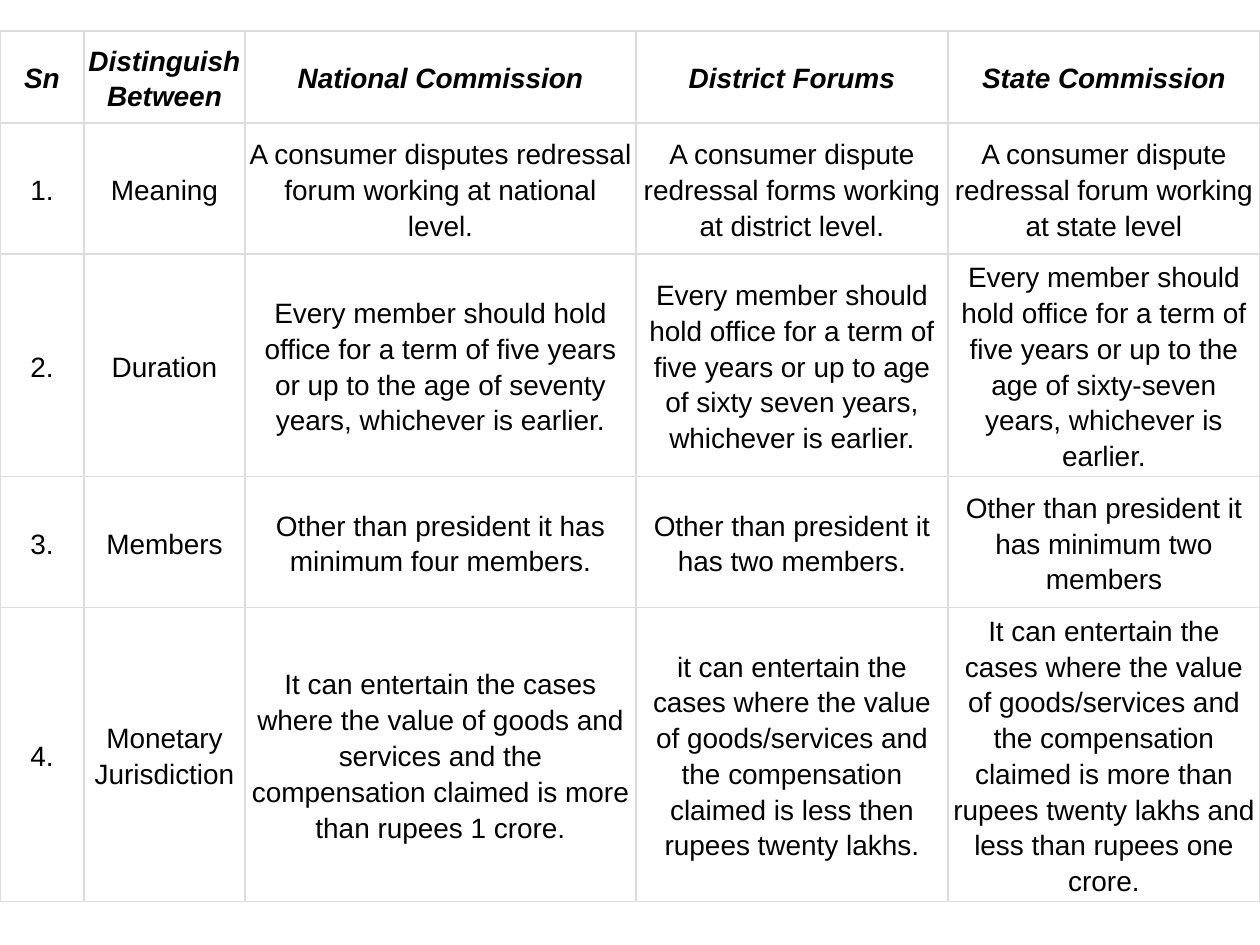
"""Build a slide with a table that compares three consumer forums."""
from lxml import etree
from pptx import Presentation
from pptx import util as u
from pptx.dml.color import RGBColor
from pptx.enum import text
from pptx.oxml.ns import qn

ROWS = [
    ("Sn", "Distinguish Between", "National Commission", "District Forums",
     "State Commission"),
    ("1.", "Meaning",
     "A consumer disputes redressal forum working at national level.",
     "A consumer dispute redressal forms working at district level.",
     "A consumer dispute redressal forum working at state level"),
    ("2.", "Duration",
     "Every member should hold office for a term of five years or up to "
     "the age of seventy years, whichever is earlier.",
     "Every member should hold office for a term of five years or up to "
     "age of sixty seven years, whichever is earlier.",
     "Every member should hold office for a term of five years or up to "
     "the age of sixty-seven years, whichever is earlier."),
    ("3.", "Members",
     "Other than president it has minimum four members.",
     "Other than president it has two members.",
     "Other than president it has minimum two members"),
    ("4.", "Monetary Jurisdiction",
     "It can entertain the cases where the value of goods and services and "
     "the compensation claimed is more than rupees 1 crore.",
     "it can entertain the cases where the value of goods/services and "
     "the compensation claimed is less then rupees twenty lakhs.",
     "It can entertain the cases where the value of goods/services and "
     "the compensation claimed is more than rupees twenty lakhs and "
     "less than rupees one crore."),
]
WIDTHS = [84, 161, 391, 312, 312]
HEIGHTS = [92, 131, 219, 131, 277]
TOP, TALL = 31, 903
PAGE = (1260, 945)
COLORS = {"ink": "000000", "paper": "FFFFFF", "rule": "DDDDDD"}
INSET = 4
CELL = {"vertical_anchor": text.MSO_ANCHOR.MIDDLE}
PARA = {"alignment": text.PP_ALIGN.CENTER, "line_spacing": 1.15}
FONT = {"name": "Arial", "size": u.Pt(16)}


def px(n):
    return u.Emu(n * 914400 // 126)


def apply(item, values):
    for key, value in values.items():
        setattr(item, key, value)


def border(cell):
    props = cell._tc.get_or_add_tcPr()
    for i, side in enumerate(("lnL", "lnR", "lnT", "lnB")):
        line = etree.Element(qn("a:" + side), w=str(u.Pt(1)))
        fill = etree.SubElement(line, qn("a:solidFill"))
        etree.SubElement(fill, qn("a:srgbClr"), val=COLORS["rule"])
        props.insert(i, line)


def fill_cell(cell, words, head):
    apply(cell, CELL)
    for side in ("left", "right", "top", "bottom"):
        setattr(cell, "margin_" + side, px(INSET))
    cell.fill.solid()
    cell.fill.fore_color.rgb = RGBColor.from_string(COLORS["paper"])
    border(cell)
    para = cell.text_frame.paragraphs[0]
    apply(para, PARA)
    run = para.add_run()
    run.text = words
    apply(run.font, FONT | {"bold": head, "italic": head})
    run.font.color.rgb = RGBColor.from_string(COLORS["ink"])


def main():
    deck = Presentation()
    deck.slide_width, deck.slide_height = map(px, PAGE)
    slide = deck.slides.add_slide(deck.slide_layouts[6])
    frame = slide.shapes.add_table(
        len(ROWS), len(WIDTHS), 0, px(TOP), px(sum(WIDTHS)), px(TALL))
    table = frame.table
    for col, width in zip(table.columns, WIDTHS):
        col.width = px(width)
    for r, (row, height) in enumerate(zip(table.rows, HEIGHTS)):
        row.height = px(height)
        for cell, words in zip(row.cells, ROWS[r]):
            fill_cell(cell, words, r == 0)
    table.cell(0, 0).text_frame.paragraphs[0].space_after = u.Pt(18)
    frame.height = px(TALL)
    deck.save("out.pptx")


if __name__ == "__main__":
    main()
